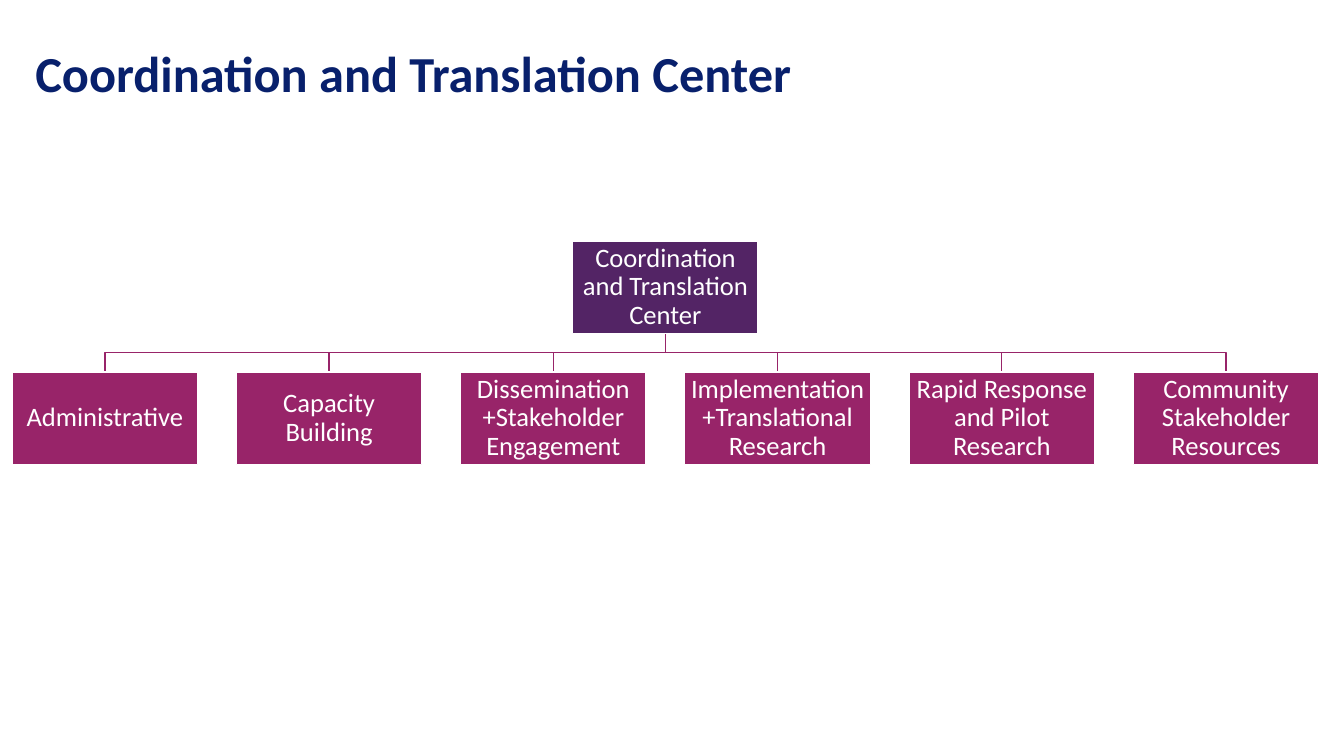
from pptx import Presentation
from pptx.dml.color import RGBColor
from pptx.enum.text import MSO_ANCHOR, MSO_AUTO_SIZE, PP_ALIGN
from pptx.enum.shapes import MSO_SHAPE
from pptx.util import Inches, Pt

COLORS = {
    "title": "08206C",
    "center": "532465",
    "core": "982469",
    "white": "FFFFFF",
}
FONT = "Calibri"
CORES = [
    "Administrative",
    "Capacity Building",
    "Dissemination +Stakeholder Engagement",
    "Implementation +Translational Research",
    "Rapid Response and Pilot Research",
    "Community Stakeholder Resources",
]
BOX_WIDTH, BOX_HEIGHT = 1.84, 0.92
CHART_MIDDLE = 6.6
CENTER_TOP, CORE_TOP = 2.39, 3.69
CORE_PITCH = 11.12 / (len(CORES) - 1)


def color(name):
    return RGBColor.from_string(COLORS[name])


def format_paragraph(paragraph, size, color_name, bold=False):
    paragraph.line_spacing = 0.9
    paragraph.font.name = FONT
    paragraph.font.size = Pt(size)
    paragraph.font.bold = bold
    paragraph.font.color.rgb = color(color_name)


def set_title(slide, text):
    title = slide.shapes.title
    title.left, title.top = Inches(0.25), Inches(0.2)
    title.width, title.height = Inches(12.8), Inches(1.11)
    frame = title.text_frame
    frame.text = text
    frame.word_wrap = True
    frame.auto_size = MSO_AUTO_SIZE.NONE
    frame.vertical_anchor = MSO_ANCHOR.MIDDLE
    frame.paragraphs[0].alignment = PP_ALIGN.LEFT
    format_paragraph(frame.paragraphs[0], 36, "title", bold=True)


def add_branch(slide, core_middle):
    """Draw the bent line from the center's box down to one core's box."""
    start = CENTER_TOP + BOX_HEIGHT
    bend = (start + CORE_TOP) / 2
    builder = slide.shapes.build_freeform(Inches(CHART_MIDDLE), Inches(start))
    corners = [(CHART_MIDDLE, bend), (core_middle, bend), (core_middle, CORE_TOP)]
    builder.add_line_segments(
        [(Inches(x), Inches(y)) for x, y in corners], close=False
    )
    branch = builder.convert_to_shape()
    branch.shadow.inherit = False
    branch.fill.background()
    branch.line.color.rgb = color("core")
    branch.line.width = Pt(1)


def add_box(slide, text, middle, top, fill):
    box = slide.shapes.add_shape(
        MSO_SHAPE.RECTANGLE,
        Inches(middle - BOX_WIDTH / 2),
        Inches(top),
        Inches(BOX_WIDTH),
        Inches(BOX_HEIGHT),
    )
    box.shadow.inherit = False
    box.fill.solid()
    box.fill.fore_color.rgb = color(fill)
    box.line.color.rgb = color("white")
    box.line.width = Pt(1)
    frame = box.text_frame
    frame.text = text
    frame.word_wrap = True
    frame.vertical_anchor = MSO_ANCHOR.MIDDLE
    frame.margin_left = frame.margin_right = Inches(0.01)
    frame.margin_top = frame.margin_bottom = Inches(0.01)
    frame.paragraphs[0].alignment = PP_ALIGN.CENTER
    format_paragraph(frame.paragraphs[0], 19, "white")


def main():
    prs = Presentation()
    prs.slide_width, prs.slide_height = Inches(13.33), Inches(7.5)
    slide = prs.slides.add_slide(prs.slide_layouts[5])
    set_title(slide, "Coordination and Translation Center")

    first_middle = CHART_MIDDLE - CORE_PITCH * (len(CORES) - 1) / 2
    core_middles = [first_middle + i * CORE_PITCH for i in range(len(CORES))]
    for middle in core_middles:
        add_branch(slide, middle)
    add_box(
        slide, "Coordination and Translation Center", CHART_MIDDLE, CENTER_TOP, "center"
    )
    for core, middle in zip(CORES, core_middles):
        add_box(slide, core, middle, CORE_TOP, "core")

    prs.save("out.pptx")


if __name__ == "__main__":
    main()
